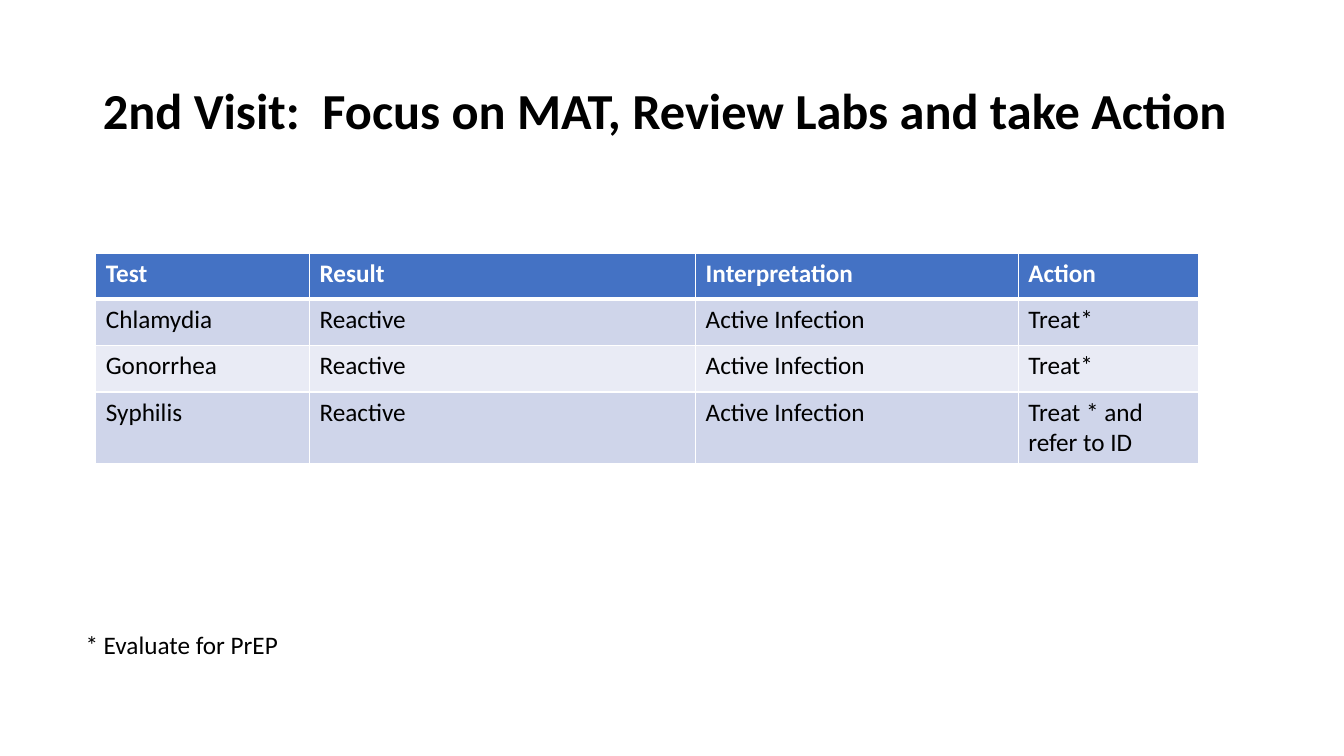
from dataclasses import dataclass

from lxml import etree
from pptx import Presentation
from pptx.dml.color import RGBColor
from pptx.enum.text import MSO_ANCHOR, MSO_AUTO_SIZE, PP_ALIGN
from pptx.oxml.ns import qn
from pptx.util import Inches, Pt

LEFT = PP_ALIGN.LEFT
TOP = MSO_ANCHOR.TOP
MIDDLE = MSO_ANCHOR.MIDDLE
GROW = MSO_AUTO_SIZE.SHAPE_TO_FIT_TEXT
NO_FIT = MSO_AUTO_SIZE.NONE


@dataclass(frozen=True)
class Theme:
    font: str = "Calibri"
    title: int = 36
    body: int = 18
    ink: str = "000000"
    white: str = "FFFFFF"
    head: str = "4472C4"
    bands: tuple[str, str] = ("CFD5EA", "E9EBF5")
    thin: int = 1
    thick: int = 3


@dataclass(frozen=True)
class Lab:
    test: str
    action: str
    height: float = 0.46
    result: str = "Reactive"
    meaning: str = "Active Infection"

    def texts(self) -> tuple[str, ...]:
        return self.test, self.result, self.meaning, self.action


THEME = Theme()
WIDTHS = (2.12, 3.83, 3.2, 1.79)
LABS = (
    Lab("Test", "Action", result="Result", meaning="Interpretation"),
    Lab("Chlamydia", "Treat*"),
    Lab("Gonorrhea", "Treat*"),
    Lab("Syphilis", "Treat * and refer to ID", height=0.7),
)


def write(frame, text: str, size: int, color: str, bold: bool = False) -> None:
    frame.text = text
    para = frame.paragraphs[0]
    para.alignment = LEFT
    font = para.font
    font.name, font.size, font.bold = THEME.font, Pt(size), bold
    font.color.rgb = RGBColor.from_string(color)


def place(shape, left: float, top: float, width: float, height: float) -> None:
    shape.left, shape.top = Inches(left), Inches(top)
    shape.width, shape.height = Inches(width), Inches(height)


def border(cell, row: int) -> None:
    """Rule a cell in white, with a thick line below the header."""
    props = cell._tc.get_or_add_tcPr()
    thick_side = {0: "B", 1: "T"}.get(row)
    for index, side in enumerate("LRTB"):
        width = THEME.thick if side == thick_side else THEME.thin
        line = etree.Element(qn(f"a:ln{side}"), w=str(Pt(width)))
        fill = etree.SubElement(line, qn("a:solidFill"))
        etree.SubElement(fill, qn("a:srgbClr"), val=THEME.white)
        props.insert(index, line)


def draw_table(slide, left: float, top: float) -> None:
    height = sum(lab.height for lab in LABS)
    table = slide.shapes.add_table(
        len(LABS), len(WIDTHS), Inches(left), Inches(top),
        Inches(sum(WIDTHS)), Inches(height)).table
    for column, width in zip(table.columns, WIDTHS):
        column.width = Inches(width)
    for row, lab in enumerate(LABS):
        table.rows[row].height = Inches(lab.height)
        head = row == 0
        shade = THEME.head if head else THEME.bands[(row - 1) % 2]
        color = THEME.white if head else THEME.ink
        for col, text in enumerate(lab.texts()):
            cell = table.cell(row, col)
            cell.vertical_anchor = TOP
            cell.fill.solid()
            cell.fill.fore_color.rgb = RGBColor.from_string(shade)
            write(cell.text_frame, text, THEME.body, color, head)
            border(cell, row)


def main() -> None:
    deck = Presentation()
    deck.slide_width, deck.slide_height = Inches(13.33), Inches(7.5)
    slide = deck.slides.add_slide(deck.slide_layouts[5])

    # Title
    title = slide.shapes.title
    place(title, 0.92, 0.4, 11.5, 1.45)
    frame = title.text_frame
    write(frame, "2nd Visit:  Focus on MAT, Review Labs and take Action",
          THEME.title, THEME.ink, True)
    frame.paragraphs[0].line_spacing = 0.9
    frame.vertical_anchor = MIDDLE
    frame.auto_size = NO_FIT

    # Lab results
    draw_table(slide, 0.95, 2.51)

    # Footnote
    note = slide.shapes.add_textbox(
        Inches(0.75), Inches(6.19), Inches(3.47), Inches(0.4)).text_frame
    note.word_wrap = True
    note.auto_size = GROW
    write(note, "* Evaluate for PrEP", THEME.body, THEME.ink)

    deck.save("out.pptx")


if __name__ == "__main__":
    main()
